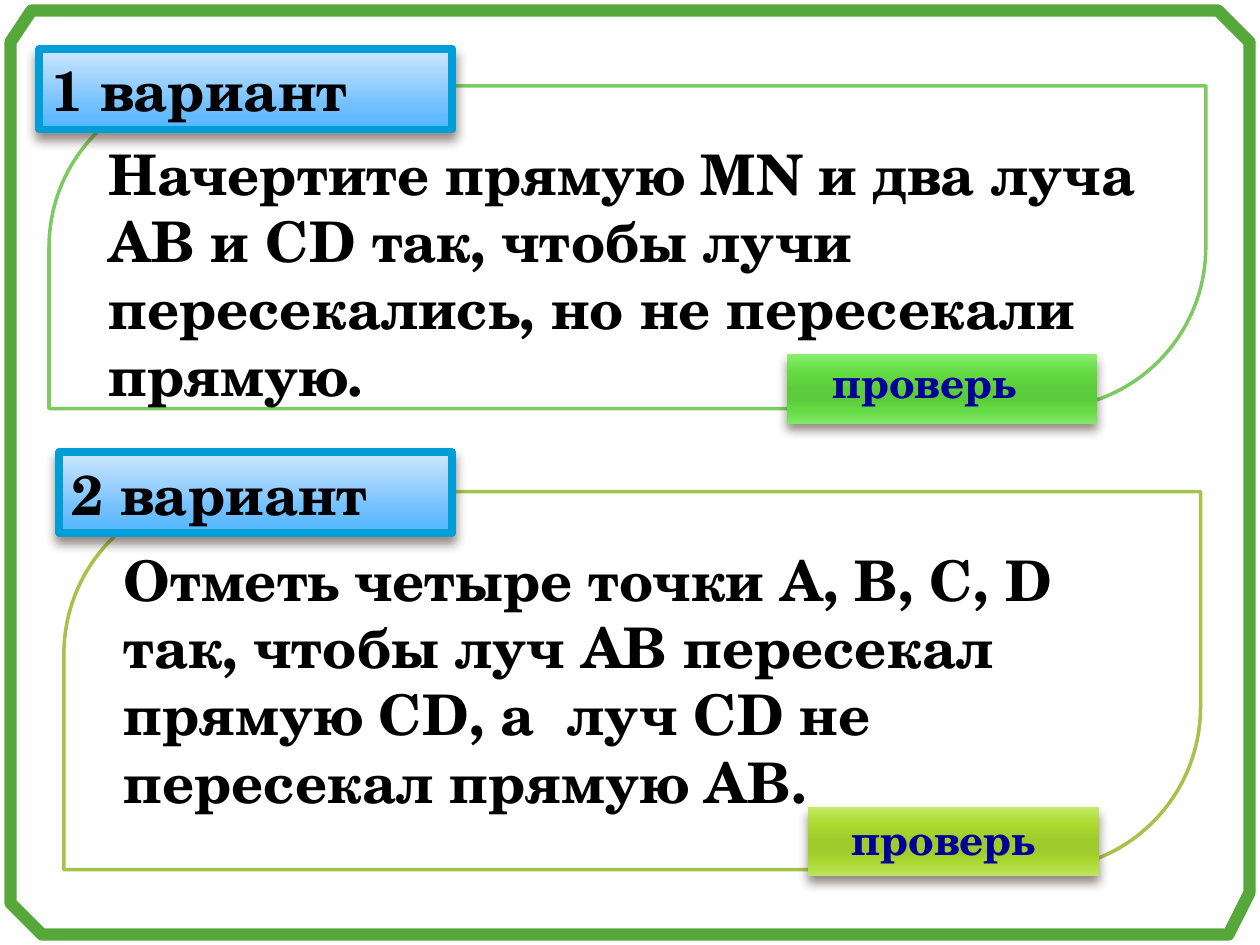
from dataclasses import dataclass

from lxml import etree
from pptx import Presentation
from pptx.dml.color import RGBColor
from pptx.enum.shapes import MSO_SHAPE
from pptx.enum.text import MSO_ANCHOR, PP_ALIGN
from pptx.oxml.ns import qn
from pptx.util import Pt

RECT = MSO_SHAPE.RECTANGLE
LEAF = MSO_SHAPE.ROUND_2_DIAG_RECTANGLE
BUTTON = MSO_SHAPE.ACTION_BUTTON_CUSTOM
TOP, MIDDLE = MSO_ANCHOR.TOP, MSO_ANCHOR.MIDDLE
LEFT = PP_ALIGN.LEFT

FACE = {"name": "TeX Gyre Schola", "bold": True}
BIG = {**FACE, "size": Pt(32)}
SMALL = {**FACE, "size": Pt(24)}
BLACK, NAVY, WHITE = "000000", "000099", "FFFFFF"
BLUE = {0: "D0E7FF", 72: "70BFFF", 100: "50B6FF"}
GREEN = {0: "89EE70", 25: "65DC43", 50: "5CCC3C",
         65: "5CCC3C", 80: "64DB42", 100: "82E868"}
LIME = {0: "C3EB66", 25: "ACDA32", 50: "9FCB2C",
        65: "9FCB2C", 80: "ABD932", 100: "BDE55D"}
FRAME = [(6, 24), (6, 516), (24, 534), (702, 534), (714, 510),
         (714, 24), (696, 6), (18, 6)]

Box = tuple[float, float, float, float]


@dataclass
class Task:
    title: str
    text: str
    edge: str
    round: float
    shade: dict[int, str]
    panel: Box
    label: Box
    button: Box
    check: Box


TASKS = [
    Task("1 вариант",
         "Начертите прямую МN и два луча АВ и СD так, чтобы лучи "
         "пересекались, но не пересекали прямую.",
         "7CCA62", 0.5, GREEN,
         (28, 49, 661, 184.5), (22.5, 28, 236, 46),
         (450, 202.5, 177, 39.5), (468.5, 200, 137, 36.5)),
    Task("2 вариант",
         "Отметь четыре точки А, В, С, D так, чтобы луч АВ пересекал "
         "прямую СD, а  луч СD не пересекал прямую АВ.",
         "A5C249", 0.43, LIME,
         (36.5, 281, 649.5, 216), (34, 258.5, 224.5, 46),
         (461.5, 461, 166.5, 39.5), (479.5, 461.5, 150.5, 36.5)),
]


def color(code: str) -> RGBColor:
    return RGBColor.from_string(code)


def outline(shape, code: str, width: float) -> None:
    shape.line.color.rgb = color(code)
    shape.line.width = Pt(width)


def write(shape, text: str, font: dict, code: str, anchor=TOP) -> None:
    frame = shape.text_frame
    frame.word_wrap = True
    frame.vertical_anchor = anchor
    para = frame.paragraphs[0]
    para.alignment = LEFT
    run = para.add_run()
    run.text = text
    for key, value in font.items():
        setattr(run.font, key, value)
    run.font.color.rgb = color(code)


def tint(parent, code: str):
    return etree.SubElement(parent, qn("a:srgbClr"), val=code)


def blend(shape, shade: dict[int, str]) -> None:
    """Fill from top to bottom with stops given in percent."""
    shape.fill.gradient()
    shape.fill.gradient_angle = 270
    stops = shape.element.spPr.find(".//" + qn("a:gsLst"))
    for stop in list(stops):
        stops.remove(stop)
    for place, code in shade.items():
        tint(etree.SubElement(stops, qn("a:gs"), pos=str(place * 1000)), code)


def drop(shape) -> None:
    """Cast a soft brown shadow straight down."""
    effects = shape.element.spPr.find(qn("a:effectLst"))
    cast = etree.SubElement(effects, qn("a:outerShdw"), blurRad=str(Pt(6)),
                            dist=str(Pt(4)), dir="5400000", rotWithShape="0")
    etree.SubElement(tint(cast, "4E3B30"), qn("a:alpha"), val="60000")


def place(slide, kind, box: Box):
    shape = slide.shapes.add_shape(kind, *map(Pt, box))
    shape.shadow.inherit = False
    return shape


def draw_panel(slide, task: Task) -> None:
    panel = place(slide, LEAF, task.panel)
    panel.adjustments[0] = task.round
    panel.fill.solid()
    panel.fill.fore_color.rgb = color(WHITE)
    outline(panel, task.edge, 2)
    write(panel, task.text, BIG, BLACK)


def draw_label(slide, task: Task) -> None:
    label = place(slide, RECT, task.label)
    blend(label, BLUE)
    outline(label, "009DD9", 4.5)
    drop(label)
    write(label, task.title, BIG, BLACK, MIDDLE)


def draw_button(slide, task: Task) -> None:
    button = place(slide, BUTTON, task.button)
    blend(button, task.shade)
    button.line.fill.background()
    drop(button)
    check = slide.shapes.add_textbox(*map(Pt, task.check))
    write(check, "проверь", SMALL, NAVY)


def draw_frame(slide) -> None:
    path = slide.shapes.build_freeform(*FRAME[0], scale=Pt(1))
    path.add_line_segments(FRAME[1:], close=True)
    frame = path.convert_to_shape()
    frame.shadow.inherit = False
    frame.fill.background()
    outline(frame, "55A839", 7)


def main() -> None:
    deck = Presentation()
    deck.slide_width, deck.slide_height = Pt(720), Pt(540)
    slide = deck.slides.add_slide(deck.slide_layouts[6])
    for task in TASKS:
        draw_panel(slide, task)
        draw_label(slide, task)
        draw_button(slide, task)
    draw_frame(slide)
    deck.save("out.pptx")


if __name__ == "__main__":
    main()
